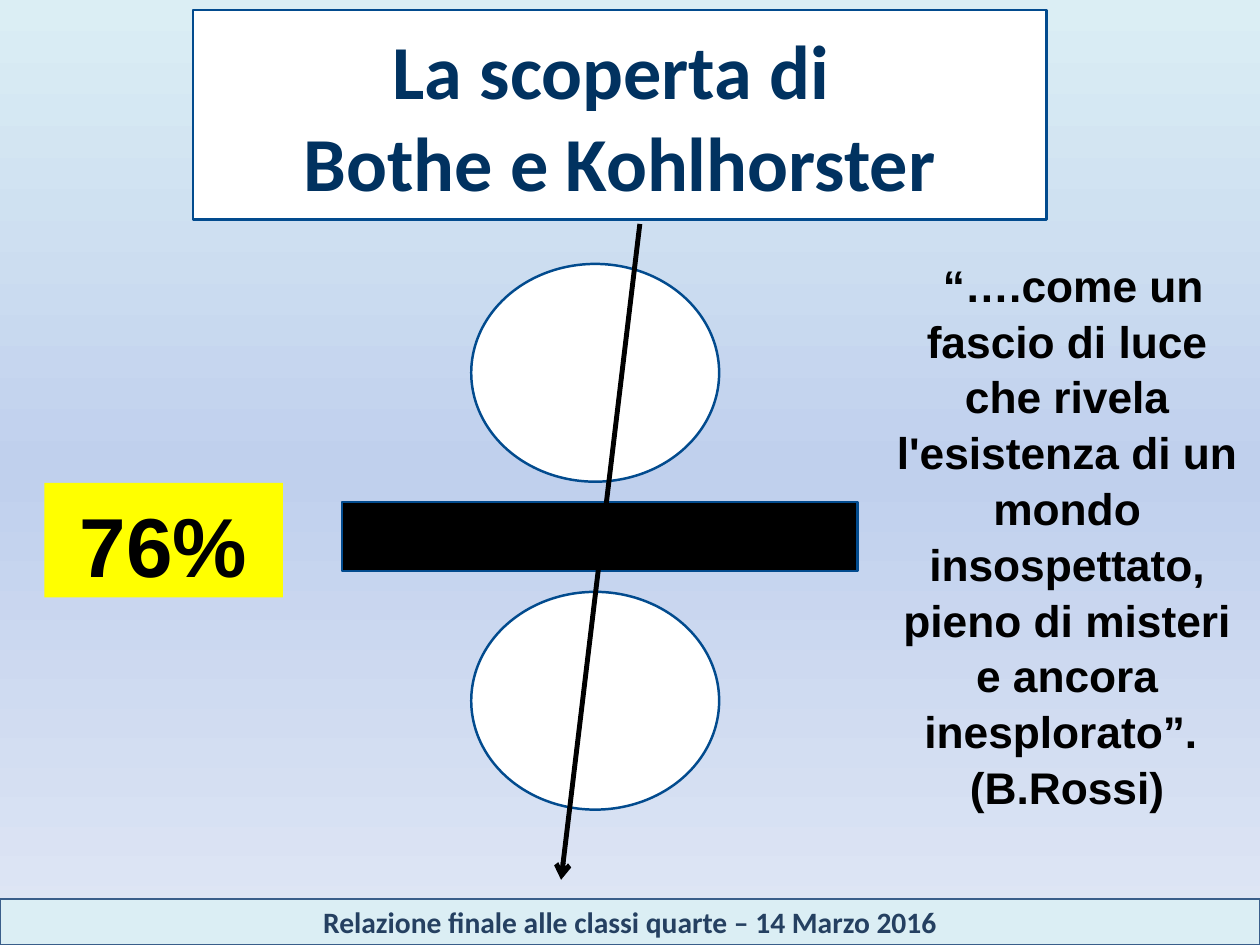
import copy

import pptx
import pptx.dml.color
import pptx.enum.shapes
import pptx.enum.text
import pptx.oxml
import pptx.oxml.ns
import pptx.util

Pt = pptx.util.Pt
RGBColor = pptx.dml.color.RGBColor
MSO_SHAPE = pptx.enum.shapes.MSO_SHAPE
MSO_ANCHOR = pptx.enum.text.MSO_ANCHOR

SLIDE_WIDTH, SLIDE_HEIGHT = 1024, 768
BACKGROUND_STOPS = (
    (0, RGBColor(0xDB, 0xEE, 0xF4)),
    (0.5, RGBColor(0xC0, 0xD0, 0xED)),
    (1, RGBColor(0xE0, 0xE7, 0xF5)),
)
BLACK = RGBColor(0, 0, 0)
WHITE = RGBColor(0xFF, 0xFF, 0xFF)
YELLOW = RGBColor(0xFF, 0xFF, 0)
PALE_BLUE = RGBColor(0xDB, 0xEE, 0xF4)
OUTLINE_BLUE = RGBColor(0x02, 0x4B, 0x8E)
FOOTER_LINE = RGBColor(0x3A, 0x5E, 0x8A)
FOOTER_TEXT = RGBColor(0x25, 0x40, 0x61)
TITLE_TEXT = RGBColor(0x01, 0x32, 0x60)


def set_gradient_background(slide):
    fill = slide.background.fill
    fill.gradient()
    fill.gradient_angle = 270
    stop_list = slide.element.find(".//" + pptx.oxml.ns.qn("a:gsLst"))
    stop_list.append(copy.deepcopy(stop_list[-1]))
    for stop, (position, color) in zip(fill.gradient_stops, BACKGROUND_STOPS):
        stop.position = position
        stop.color.rgb = color


def add_shape(slide, kind, left, top, width, height, fill, line=None):
    shape = slide.shapes.add_shape(kind, Pt(left), Pt(top), Pt(width), Pt(height))
    shape.shadow.inherit = False
    shape.fill.solid()
    shape.fill.fore_color.rgb = fill
    if line is None:
        shape.line.fill.background()
    else:
        shape.line.color.rgb = line
        shape.line.width = Pt(2)
    return shape


def write_text(shape, text, *, size, font="Arial", color=BLACK,
               anchor=MSO_ANCHOR.TOP, side_margin=10, line_spacing=None):
    """Fill a shape with bold centred text; a vertical tab breaks a line."""
    frame = shape.text_frame
    frame.word_wrap = True
    frame.vertical_anchor = anchor
    frame.margin_left = frame.margin_right = Pt(side_margin)
    frame.margin_top = frame.margin_bottom = Pt(5)
    frame.text = text
    for paragraph in frame.paragraphs:
        paragraph.alignment = pptx.enum.text.PP_ALIGN.CENTER
        if line_spacing:
            paragraph.line_spacing = line_spacing
        for run in paragraph.runs:
            run.font.name = font
            run.font.size = Pt(size)
            run.font.bold = True
            run.font.color.rgb = color


def add_arrow(slide, start, end):
    arrow = slide.shapes.add_connector(
        pptx.enum.shapes.MSO_CONNECTOR.STRAIGHT,
        *(Pt(value) for value in (*start, *end)))
    arrow.line.color.rgb = BLACK
    arrow.line.width = Pt(4)
    line = arrow.line._get_or_add_ln()
    pptx.oxml.ns.qn("a:tailEnd")
    line.append(pptx.oxml.parse_xml(
        f'<a:tailEnd {pptx.oxml.ns.nsdecls("a")} type="arrow"/>'))
    line.addnext(pptx.oxml.parse_xml(
        f'<a:effectLst {pptx.oxml.ns.nsdecls("a")}/>'))


def main():
    presentation = pptx.Presentation()
    presentation.slide_width = Pt(SLIDE_WIDTH)
    presentation.slide_height = Pt(SLIDE_HEIGHT)
    slide = presentation.slides.add_slide(presentation.slide_layouts[6])
    set_gradient_background(slide)

    footer = add_shape(slide, MSO_SHAPE.RECTANGLE, 0, 730.5, SLIDE_WIDTH, 37.5,
                       PALE_BLUE, FOOTER_LINE)
    write_text(footer, "Relazione finale alle classi quarte – 14 Marzo 2016",
               size=24, font="Calibri", color=FOOTER_TEXT,
               anchor=MSO_ANCHOR.MIDDLE, side_margin=5)

    title = add_shape(slide, MSO_SHAPE.RECTANGLE, 157, 8, 693.5, 170.5,
                      WHITE, OUTLINE_BLUE)
    write_text(title, "La scoperta di \vBothe e Kohlhorster",
               size=62, font="Calibri", color=TITLE_TEXT,
               anchor=MSO_ANCHOR.MIDDLE, side_margin=5)

    for counter_top in (214.5, 481):
        add_shape(slide, MSO_SHAPE.OVAL, 383, counter_top, 201.5, 177,
                  WHITE, OUTLINE_BLUE)
    add_shape(slide, MSO_SHAPE.RECTANGLE, 278, 408, 419, 56, BLACK, OUTLINE_BLUE)
    add_arrow(slide, (520, 182), (456, 715))

    percentage = add_shape(slide, MSO_SHAPE.RECTANGLE, 36, 392.5, 194, 93, YELLOW)
    write_text(percentage, "76%", size=68, line_spacing=1.05)

    quote = slide.shapes.add_textbox(Pt(710.5), Pt(202.5), Pt(313.5), Pt(446.5))
    write_text(quote,
               " “….come un fascio di luce che rivela l'esistenza di un mondo "
               "insospettato, pieno di misteri e ancora inesplorato”. \n(B.Rossi)",
               size=36, line_spacing=1.05)

    presentation.save("out.pptx")


if __name__ == "__main__":
    main()
